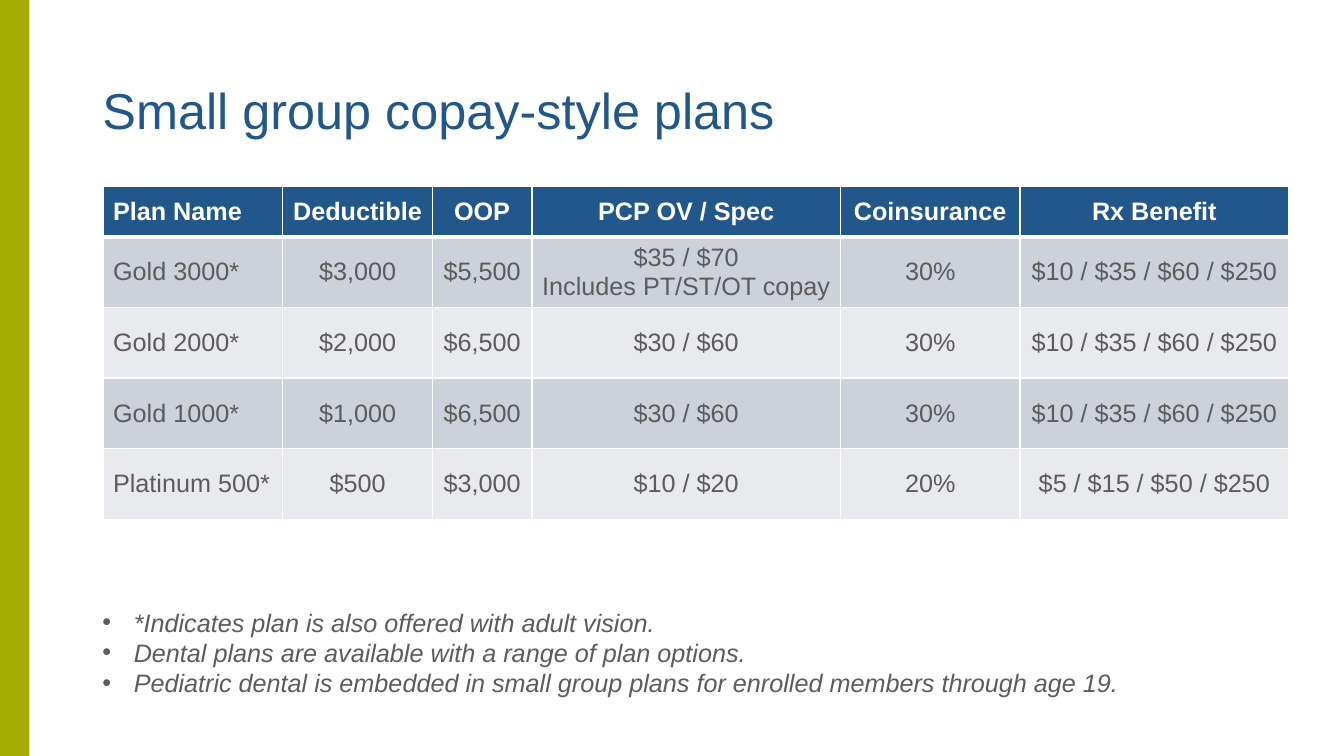
import pptx
import pptx.dml.color
import pptx.enum.shapes
import pptx.enum.text
import pptx.oxml
import pptx.oxml.ns
import pptx.util

Pt = pptx.util.Pt
RGBColor = pptx.dml.color.RGBColor
ALIGN = pptx.enum.text.PP_ALIGN
ANCHOR = pptx.enum.text.MSO_ANCHOR

WHITE = RGBColor(0xFF, 0xFF, 0xFF)
GREEN = RGBColor(0xA2, 0xAD, 0x00)
BLUE = RGBColor(0x21, 0x57, 0x8A)
GRAY = RGBColor(0x5D, 0x5B, 0x5B)
DARK_BAND = RGBColor(0xCD, 0xD1, 0xDA)
LIGHT_BAND = RGBColor(0xE8, 0xEA, 0xED)

SLIDE_WIDTH, SLIDE_HEIGHT = 960, 540
COLUMN_WIDTHS = [128.2, 106.8, 71.2, 220.4, 128.2, 192]
HEADER_HEIGHT, ROW_HEIGHT = 36, 50.4
PLANS = [
    ["Plan Name", "Deductible", "OOP", "PCP OV / Spec", "Coinsurance", "Rx Benefit"],
    ["Gold 3000*", "$3,000", "$5,500", "$35 / $70\nIncludes PT/ST/OT copay", "30%",
     "$10 / $35 / $60 / $250"],
    ["Gold 2000*", "$2,000", "$6,500", "$30 / $60", "30%", "$10 / $35 / $60 / $250"],
    ["Gold 1000*", "$1,000", "$6,500", "$30 / $60", "30%", "$10 / $35 / $60 / $250"],
    ["Platinum 500*", "$500", "$3,000", "$10 / $20", "20%", "$5 / $15 / $50 / $250"],
]
NOTES = [
    "*Indicates plan is also offered with adult vision.",
    "Dental plans are available with a range of plan options.",
    "Pediatric dental is embedded in small group plans for enrolled members through age 19.",
]


def format_runs(paragraph, size, color, bold=False, italic=False):
    for run in paragraph.runs:
        run.font.name = "Arial"
        run.font.size = Pt(size)
        run.font.color.rgb = color
        run.font.bold = bold
        run.font.italic = italic


def add_side_bar(slide, left, top, width, height):
    bar = slide.shapes.add_shape(
        pptx.enum.shapes.MSO_SHAPE.RECTANGLE, Pt(left), Pt(top), Pt(width), Pt(height))
    bar.shadow.inherit = False
    bar.fill.solid()
    bar.fill.fore_color.rgb = GREEN
    bar.line.fill.background()


def set_title(slide, left, top, width, height):
    title = slide.shapes.title
    title.left, title.top, title.width, title.height = map(Pt, (left, top, width, height))
    title.text_frame.text = "Small group copay-style plans"
    title.text_frame.vertical_anchor = ANCHOR.MIDDLE
    paragraph = title.text_frame.paragraphs[0]
    paragraph.alignment = ALIGN.LEFT
    paragraph.line_spacing = 0.9
    format_runs(paragraph, 36, BLUE)


def set_borders(cell, top, bottom):
    properties = cell._tc.get_or_add_tcPr()
    sides = [("lnL", 1), ("lnR", 1), ("lnT", top), ("lnB", bottom)]
    for position, (side, width) in enumerate(sides):
        properties.insert(position, pptx.oxml.parse_xml(
            f'<a:{side} {pptx.oxml.ns.nsdecls("a")} w="{Pt(width)}">'
            f'<a:solidFill><a:srgbClr val="{WHITE}"/></a:solidFill></a:{side}>'))


def add_plan_table(slide, left, top):
    height = HEADER_HEIGHT + ROW_HEIGHT * (len(PLANS) - 1)
    table = slide.shapes.add_table(
        len(PLANS), len(COLUMN_WIDTHS),
        Pt(left), Pt(top), Pt(sum(COLUMN_WIDTHS)), Pt(height)).table
    for column, width in zip(table.columns, COLUMN_WIDTHS):
        column.width = Pt(width)
    for row_index, plan in enumerate(PLANS):
        is_header = row_index == 0
        table.rows[row_index].height = Pt(HEADER_HEIGHT if is_header else ROW_HEIGHT)
        band = DARK_BAND if row_index % 2 else LIGHT_BAND
        for column_index, text in enumerate(plan):
            cell = table.cell(row_index, column_index)
            cell.text_frame.text = text
            cell.vertical_anchor = ANCHOR.MIDDLE
            cell.margin_left = cell.margin_right = Pt(7)
            cell.fill.solid()
            cell.fill.fore_color.rgb = BLUE if is_header else band
            set_borders(cell, 3 if row_index == 1 else 1, 3 if is_header else 1)
            for paragraph in cell.text_frame.paragraphs:
                paragraph.alignment = ALIGN.CENTER if column_index else ALIGN.LEFT
                format_runs(paragraph, 18, WHITE if is_header else GRAY, bold=is_header)


def add_notes_list(slide, left, top, width, height):
    text_frame = slide.shapes.add_textbox(Pt(left), Pt(top), Pt(width), Pt(height)).text_frame
    text_frame.word_wrap = True
    text_frame.text = "\n".join(NOTES)
    for paragraph in text_frame.paragraphs:
        format_runs(paragraph, 18, GRAY, italic=True)
        properties = paragraph._p.get_or_add_pPr()
        properties.set("marL", str(Pt(22.5)))
        properties.set("indent", str(-Pt(22.5)))
        for bullet in ('buFont {} typeface="Arial"', 'buChar {} char="•"'):
            properties.append(pptx.oxml.parse_xml(
                "<a:" + bullet.format(pptx.oxml.ns.nsdecls("a")) + "/>"))


def main():
    presentation = pptx.Presentation()
    presentation.slide_width = Pt(SLIDE_WIDTH)
    presentation.slide_height = Pt(SLIDE_HEIGHT)
    slide = presentation.slides.add_slide(presentation.slide_layouts[5])
    add_side_bar(slide, 0, 0, 21, SLIDE_HEIGHT)
    set_title(slide, 66, 28.8, 828, 104.4)
    add_plan_table(slide, 73.8, 133.2)
    add_notes_list(slide, 66, 430, 820.8, 94.4)
    presentation.save("out.pptx")


if __name__ == "__main__":
    main()
